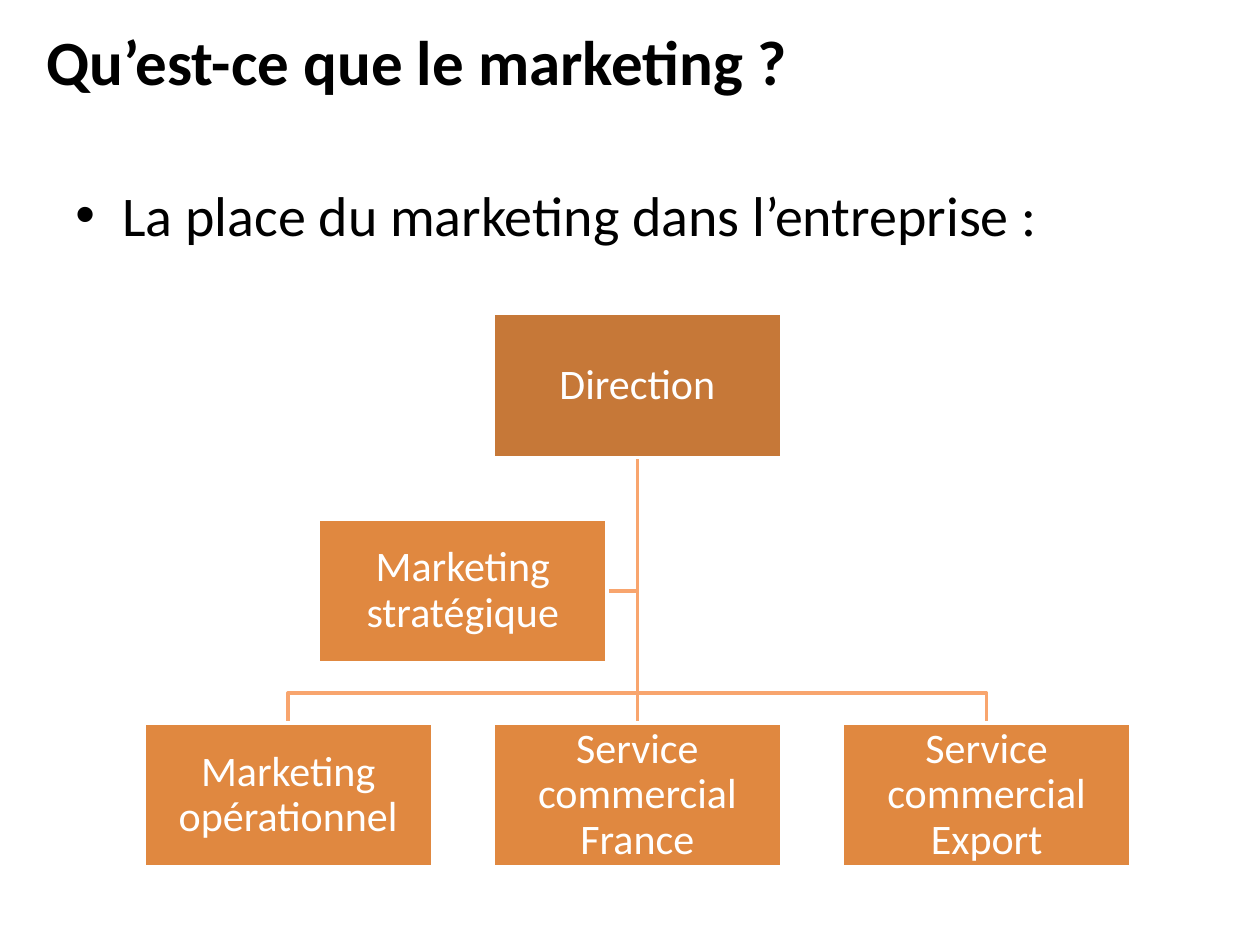
"""Build the slide showing where marketing sits in the company."""
from lxml import etree
from pptx import Presentation
from pptx.dml.color import RGBColor
from pptx.enum.shapes import MSO_CONNECTOR, MSO_SHAPE
from pptx.enum.text import MSO_ANCHOR, PP_ALIGN
from pptx.oxml.ns import qn
from pptx.util import Cm, Pt

RECT = MSO_SHAPE.RECTANGLE
STRAIGHT = MSO_CONNECTOR.STRAIGHT
TOP, MIDDLE = MSO_ANCHOR.TOP, MSO_ANCHOR.MIDDLE
CENTER = PP_ALIGN.CENTER
BLACK = RGBColor(0x00, 0x00, 0x00)
WHITE = RGBColor(0xFF, 0xFF, 0xFF)
BROWN = RGBColor(0xC6, 0x78, 0x38)
ORANGE = RGBColor(0xE0, 0x88, 0x40)
PEACH = RGBColor(0xF8, 0xA5, 0x6E)

WIDE, HIGH = 5.82, 2.9
MID, STEP = 12.85, 7.04
ROWS = [6.32, 10.46, 14.58]
BUS = 13.97


def style(frame, text, size, color, bold=False):
    frame.word_wrap = True
    frame.text = text
    font = frame.paragraphs[0].runs[0].font
    font.name, font.size, font.bold = "Calibri", Pt(size), bold
    font.color.rgb = color


deck = Presentation()
deck.slide_width, deck.slide_height = Cm(25.4), Cm(19.05)
shapes = deck.slides.add_slide(deck.slide_layouts[6]).shapes

title = shapes.add_textbox(Cm(0.69), Cm(0.33), Cm(18.21), Cm(3.18)).text_frame
title.vertical_anchor = TOP
style(title, "Qu’est-ce que le marketing ?", 36, BLACK, True)

start = ROWS[0] + HIGH
side = ROWS[1] + HIGH / 2
edge = MID - STEP / 2 + WIDE / 2
paths = [[(MID, side), (edge, side)]]
for end in (MID - STEP, MID + STEP):
    paths.append([(MID, BUS), (end, BUS), (end, ROWS[2])])
for path in paths:
    pen = shapes.build_freeform(Cm(MID), Cm(start))
    pen.add_line_segments([(Cm(x), Cm(y)) for x, y in path], close=False)
    branch = pen.convert_to_shape()
    branch.shadow.inherit = False
    branch.fill.background()
    branch.line.color.rgb = PEACH
    branch.line.width = Pt(2)

trunk = shapes.add_connector(STRAIGHT, Cm(MID), Cm(start), Cm(MID), Cm(ROWS[2]))
trunk.line.color.rgb = PEACH
trunk.line.width = Pt(2)
etree.SubElement(trunk.element.spPr, qn("a:effectLst"))

posts = [
    ("Direction", 0, 0, BROWN),
    ("Marketing opérationnel", -1, 2, ORANGE),
    ("Service commercial France", 0, 2, ORANGE),
    ("Service commercial Export", 1, 2, ORANGE),
    ("Marketing stratégique", -0.5, 1, ORANGE),
]
boxes = {}
for name, col, row, color in posts:
    left = MID + col * STEP - WIDE / 2
    box = shapes.add_shape(RECT, Cm(left), Cm(ROWS[row]), Cm(WIDE), Cm(HIGH))
    box.shadow.inherit = False
    box.fill.solid()
    box.fill.fore_color.rgb = color
    box.line.color.rgb = WHITE
    box.line.width = Pt(2)
    frame = box.text_frame
    frame.margin_left = frame.margin_right = Cm(0.04)
    frame.margin_top = frame.margin_bottom = Cm(0.04)
    frame.vertical_anchor = MIDDLE
    style(frame, name, 24, WHITE)
    frame.paragraphs[0].alignment = CENTER
    frame.paragraphs[0].line_spacing = 0.9
    boxes[name] = box
trunk.begin_connect(boxes["Direction"], 2)
trunk.end_connect(boxes["Service commercial France"], 0)

body = shapes.add_textbox(Cm(1.27), Cm(3.51), Cm(22.86), Cm(13.51)).text_frame
style(body, "La place du marketing dans l’entreprise :", 32, BLACK)
props = body.paragraphs[0]._p.get_or_add_pPr()
props.set("marL", str(Cm(0.95)))
props.set("indent", str(-Cm(0.95)))
etree.SubElement(props, qn("a:buFont")).set("typeface", "Arial")
etree.SubElement(props, qn("a:buChar")).set("char", "•")

deck.save("out.pptx")
